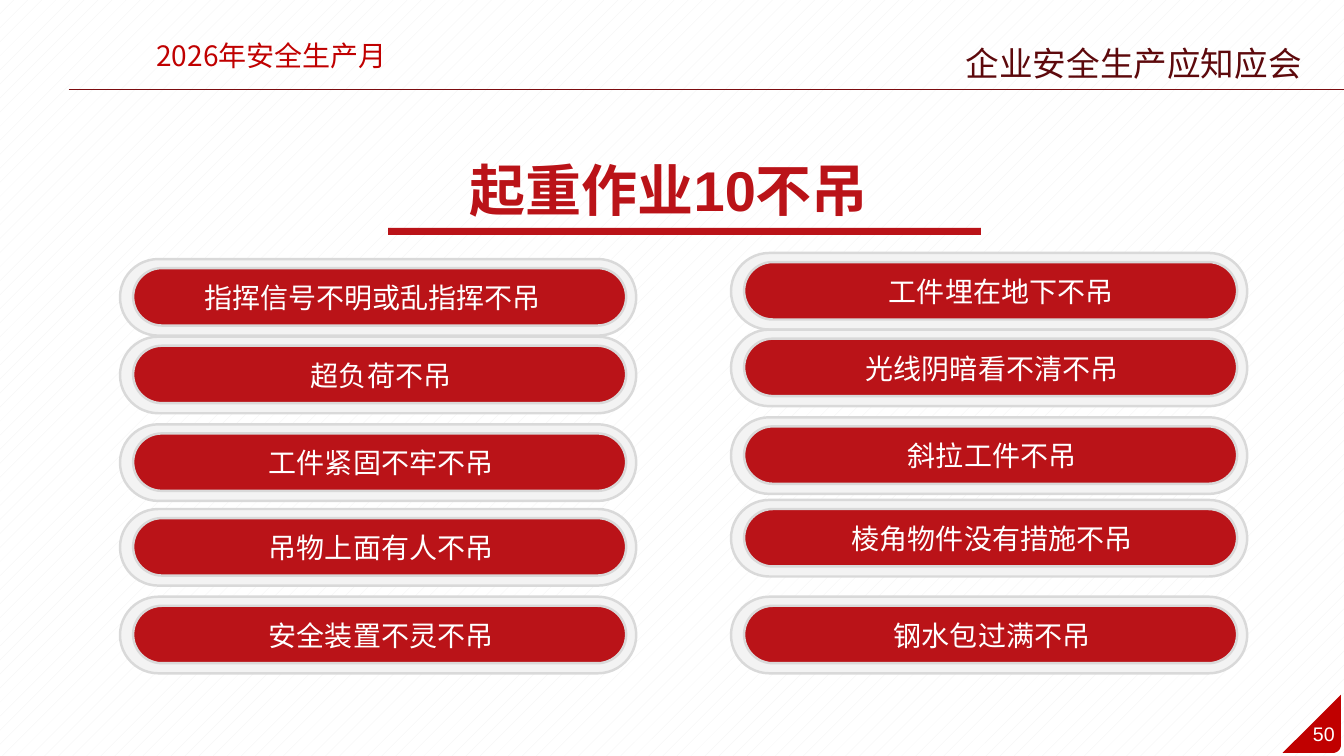
import math
from dataclasses import dataclass

import lxml.etree
import pptx
import pptx.dml.color
import pptx.enum.dml
import pptx.enum.shapes
import pptx.enum.text
import pptx.oxml.ns
import pptx.shapes.autoshape
import pptx.shapes.base
import pptx.shapes.group
import pptx.slide
import pptx.text.text
import pptx.util

Inches = pptx.util.Inches
RGBColor = pptx.dml.color.RGBColor
Shape = pptx.enum.shapes.MSO_SHAPE
Align = pptx.enum.text.PP_ALIGN
Anchor = pptx.enum.text.MSO_ANCHOR
AutoSize = pptx.enum.text.MSO_AUTO_SIZE
qn = pptx.oxml.ns.qn

WHITE = RGBColor(0xFF, 0xFF, 0xFF)
PATTERN_GREY = RGBColor(0xF2, 0xF2, 0xF2)
FRAME_GREY = RGBColor(0xF3, 0xF3, 0xF3)
EDGE_GREY = RGBColor(0xD9, 0xD9, 0xD9)
RED = RGBColor(0xBA, 0x13, 0x18)
CORNER_RED = RGBColor(0xC0, 0x00, 0x00)
RULE_RED = RGBColor(0x7C, 0x0D, 0x10)
DARK_RED = RGBColor(0x5D, 0x09, 0x0C)

CHINESE_FONT = "Noto Sans CJK SC"
LATIN_FONT = "Arial"


@dataclass(frozen=True)
class Box:
    left: float
    top: float
    width: float
    height: float

    def lengths(self) -> list[pptx.util.Length]:
        return [Inches(value) for value in (self.left, self.top, self.width, self.height)]


@dataclass(frozen=True)
class TextStyle:
    size: int
    color: RGBColor
    font: str = CHINESE_FONT
    bold: bool = False
    align: Align = Align.CENTER


@dataclass(frozen=True)
class Rule:
    text: str
    left: float
    top: float
    label_left: float = 0.48
    label_width: float = 4.22


LEFT, RIGHT = 1.19, 7.25
RULES = [
    Rule("指挥信号不明或乱指挥不吊", LEFT, 2.57, label_width=4.05),
    Rule("超负荷不吊", LEFT, 3.34),
    Rule("工件紧固不牢不吊", LEFT, 4.21),
    Rule("吊物上面有人不吊", LEFT, 5.05),
    Rule("安全装置不灵不吊", LEFT, 5.92),
    Rule("工件埋在地下不吊", RIGHT, 2.51, label_left=1.07, label_width=3.22),
    Rule("光线阴暗看不清不吊", RIGHT, 3.27),
    Rule("斜拉工件不吊", RIGHT, 4.14),
    Rule("棱角物件没有措施不吊", RIGHT, 4.96),
    Rule("钢水包过满不吊", RIGHT, 5.92),
]
LABEL_STYLE = TextStyle(20, WHITE)


def write_text(frame: pptx.text.text.TextFrame, text: str, style: TextStyle, frame_format: dict) -> None:
    for name, value in frame_format.items():
        setattr(frame, name, value)
    paragraph = frame.paragraphs[0]
    paragraph.alignment = style.align
    run = paragraph.add_run()
    run.text = text
    font_format = {"name": style.font, "size": pptx.util.Pt(style.size), "bold": style.bold}
    for name, value in font_format.items():
        setattr(run.font, name, value)
    run.font.color.rgb = style.color
    east_asian = lxml.etree.SubElement(run.font._element, qn("a:ea"))
    east_asian.set("typeface", CHINESE_FONT)


def add_text(shapes, text: str, box: Box, style: TextStyle, anchor: Anchor = Anchor.TOP, wrap: bool = True) -> None:
    frame = shapes.add_textbox(*box.lengths()).text_frame
    frame_format = {"word_wrap": wrap, "auto_size": AutoSize.SHAPE_TO_FIT_TEXT, "vertical_anchor": anchor}
    write_text(frame, text, style, frame_format)


def paint(shape: pptx.shapes.autoshape.Shape, fill: RGBColor, edge: RGBColor | None = None) -> None:
    shape.shadow.inherit = False
    shape.fill.solid()
    shape.fill.fore_color.rgb = fill
    if edge is None:
        shape.line.fill.background()
    else:
        shape.line.color.rgb = edge
        shape.line.width = pptx.util.Pt(1.75)


def add_rule(slide: pptx.slide.Slide, rule: Rule) -> None:
    group = slide.shapes.add_group_shape()
    frame = Box(rule.left, rule.top, 5.12, 0.76)
    pill = Box(rule.left + 0.13, rule.top + 0.09, 4.89, 0.57)
    for box, fill in ((frame, FRAME_GREY), (pill, RED)):
        shape = group.shapes.add_shape(Shape.ROUNDED_RECTANGLE, *box.lengths())
        shape.adjustments[0] = 0.5
        paint(shape, fill, EDGE_GREY)
    label = Box(rule.left + rule.label_left, rule.top + 0.16, rule.label_width, 0.44)
    add_text(group.shapes, rule.text, label, LABEL_STYLE, Anchor.MIDDLE)


def add_header_line(slide: pptx.slide.Slide) -> None:
    connector = slide.shapes.add_connector(
        pptx.enum.shapes.MSO_CONNECTOR.STRAIGHT, Inches(0.68), Inches(0.89), Inches(13.33), Inches(0.89)
    )
    connector.line.color.rgb = RULE_RED
    connector.line.width = pptx.util.Pt(0.75)
    lxml.etree.SubElement(connector._element.spPr, qn("a:effectLst"))


def add_page_corner(slide: pptx.slide.Slide) -> None:
    right, top, bottom, left, radius = 13.3, 6.89, 7.47, 12.72, 0.08
    angles = [math.radians(degrees) for degrees in range(0, 91, 15)]
    arc = [
        (right - radius + radius * math.cos(angle), bottom - radius + radius * math.sin(angle))
        for angle in angles
    ]
    points = [(Inches(x), Inches(y)) for x, y in [*arc, (left, bottom)]]
    builder = slide.shapes.build_freeform(Inches(right), Inches(top))
    builder.add_line_segments(points, close=True)
    paint(builder.convert_to_shape(), CORNER_RED)
    add_text(slide.shapes, "50", Box(12.91, 7.11, 0.44, 0.34), TextStyle(14, WHITE, LATIN_FONT), wrap=False)


def add_title(slide: pptx.slide.Slide) -> None:
    title = slide.shapes.title
    position = zip(("left", "top", "width", "height"), Box(4.53, 1.56, 6.1, 0.63).lengths())
    for name, value in position:
        setattr(title, name, value)
    frame_format = {
        "word_wrap": True,
        "auto_size": AutoSize.NONE,
        "vertical_anchor": Anchor.MIDDLE,
        "margin_left": Inches(0.13),
        "margin_right": Inches(0.13),
        "margin_top": Inches(0.07),
        "margin_bottom": Inches(0.07),
    }
    style = TextStyle(40, RED, LATIN_FONT, bold=True, align=Align.LEFT)
    write_text(title.text_frame, "起重作业10不吊", style, frame_format)
    underline = slide.shapes.add_shape(Shape.RECTANGLE, *Box(3.85, 2.26, 5.88, 0.07).lengths())
    paint(underline, RED)


def main() -> None:
    presentation = pptx.Presentation()
    presentation.slide_width = Inches(13.33)
    presentation.slide_height = Inches(7.5)
    slide = presentation.slides.add_slide(presentation.slide_layouts.get_by_name("Title Only"))
    background = slide.background.fill
    background.patterned()
    background.pattern = pptx.enum.dml.MSO_PATTERN.PERCENT_5
    background.fore_color.rgb = PATTERN_GREY
    background.back_color.rgb = WHITE

    add_header_line(slide)
    add_page_corner(slide)
    add_text(slide.shapes, "2026年安全生产月", Box(0.98, 0.33, 3.43, 0.44), TextStyle(20, CORNER_RED))
    for rule in RULES:
        add_rule(slide, rule)
    add_title(slide)
    add_text(slide.shapes, "企业安全生产应知应会", Box(7.25, 0.38, 7.99, 0.5), TextStyle(24, DARK_RED))
    presentation.save("out.pptx")


if __name__ == "__main__":
    main()
